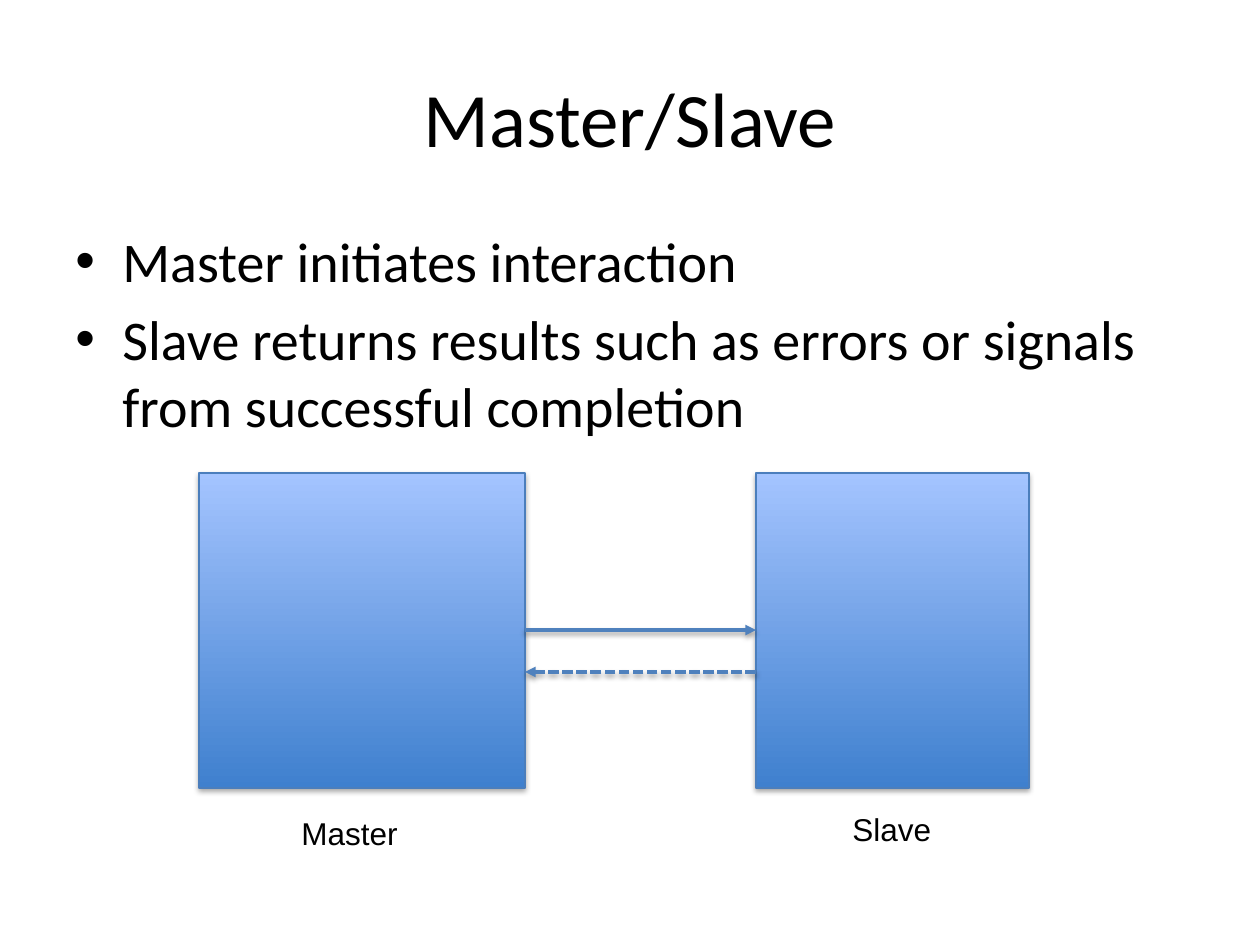
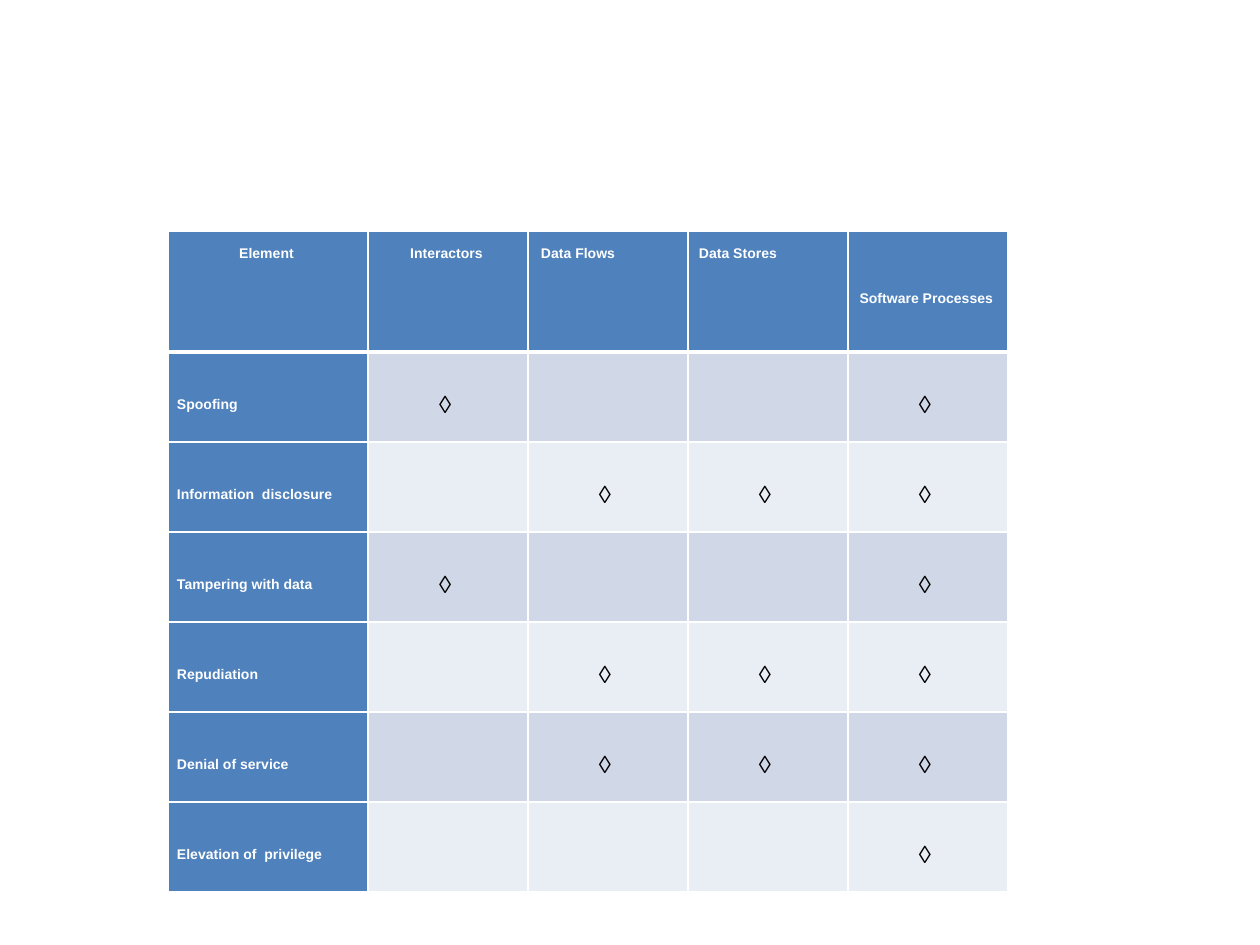
from dataclasses import dataclass

from lxml import etree
from pptx import Presentation
from pptx import util as u
from pptx.dml.color import RGBColor
from pptx.enum import dml, shapes, text
from pptx.oxml import parse_xml
from pptx.oxml.ns import nsdecls, qn


@dataclass(frozen=True)
class Theme:
    black: str = "000000"
    white: str = "FFFFFF"
    blue: str = "4F81BD"
    box_line: str = "4B7EBC"
    box_bottom: str = "3F80CE"
    box_top: str = "A4C4FF"
    bands: tuple = ("D0D8E8", "E9EDF4")
    heading_font: str = "Calibri"
    plain_font: str = "Arial"
    title: float = 44
    body: float = 32
    label: float = 18
    mark: float = 14
    cell: float = 8


theme = Theme()
PX = 914400 / 126


def px(*lengths):
    return [u.Emu(round(n * PX)) for n in lengths]


def style(p, font, size, color, bold=False, align=text.PP_ALIGN.LEFT):
    p.alignment = align
    for r in p.runs:
        r.font.name, r.font.size, r.font.bold = font, u.Pt(size), bold
        r.font.color.rgb = RGBColor.from_string(color)


prs = Presentation()
prs.slide_width, prs.slide_height = px(1260, 945)
blank = prs.slide_layouts[6]

# Slide 1: title
s = prs.slides.add_slide(blank)
tf = s.shapes.add_textbox(*px(63, 38, 1134, 157)).text_frame
tf.word_wrap = True
tf.vertical_anchor = text.MSO_ANCHOR.MIDDLE
tf.text = "Master/Slave"
style(tf.paragraphs[0], theme.heading_font, theme.title, theme.black,
      align=text.PP_ALIGN.CENTER)

# Bullets
tf = s.shapes.add_textbox(*px(63, 220, 1134, 221)).text_frame
tf.word_wrap = True
tf.text = ("Master initiates interaction\n"
           "Slave returns results such as errors or signals from successful completion")
indent = px(47)[0]
for p in tf.paragraphs:
    style(p, theme.heading_font, theme.body, theme.black)
    p.space_before = u.Pt(theme.body * 0.2)
    pPr = p._p.get_or_add_pPr()
    pPr.set("marL", str(indent))
    pPr.set("indent", str(-indent))
    etree.SubElement(pPr, qn("a:buFont")).set("typeface", theme.plain_font)
    etree.SubElement(pPr, qn("a:buChar")).set("char", "•")

# Boxes with their labels
diagram = []
for name, left, width, label_left, label_top in (
        ("Master", 199, 326, 289, 808), ("Slave", 756, 273, 840, 804)):
    sp = s.shapes.add_shape(shapes.MSO_SHAPE.RECTANGLE, *px(left, 473, width, 315))
    sp.fill.gradient()
    sp.fill.gradient_angle = 90
    for stop, color in zip(sp.fill.gradient_stops, (theme.box_bottom, theme.box_top)):
        stop.color.rgb = RGBColor.from_string(color)
    sp.line.color.rgb = RGBColor.from_string(theme.box_line)
    sp.line.width = u.Pt(0.75)
    diagram.append((sp, 35))

    tf = s.shapes.add_textbox(*px(label_left, label_top, 147, 50)).text_frame
    tf.word_wrap = True
    tf.text = name
    style(tf.paragraphs[0], theme.plain_font, theme.label, theme.black)

# Request and reply arrows
for start, end, y, dash in ((525, 756, 630, None),
                            (756, 525, 672, dml.MSO_LINE.SQUARE_DOT)):
    arrow = s.shapes.add_connector(shapes.MSO_CONNECTOR.STRAIGHT, *px(start, y, end, y))
    arrow.line.color.rgb = RGBColor.from_string(theme.blue)
    arrow.line.width = u.Pt(2)
    if dash:
        arrow.line.dash_style = dash
    etree.SubElement(arrow.line._get_or_add_ln(), qn("a:tailEnd")).set("type", "triangle")
    diagram.append((arrow, 38))

# Soft shadow under boxes and arrows
for sp, alpha in diagram:
    sp._element.spPr.append(parse_xml(
        f'<a:effectLst {nsdecls("a")}><a:outerShdw blurRad="{u.Pt(3.1)}" '
        f'dist="{u.Pt(1.7)}" dir="5400000" rotWithShape="0">'
        f'<a:srgbClr val="{theme.black}"><a:alpha val="{alpha * 1000}"/></a:srgbClr>'
        '</a:outerShdw></a:effectLst>'))

# Slide 2: threats against system elements
s = prs.slides.add_slide(blank)
headers = ("Element ", "Interactors ", "Data Flows", "Data Stores", "Software Processes ")
threats = (
    ("Spoofing", (1, 4)),
    ("Information  disclosure", (2, 3, 4)),
    ("Tampering with data", (1, 4)),
    ("Repudiation", (2, 3, 4)),
    ("Denial of service", (2, 3, 4)),
    ("Elevation of  privilege", (4,)),
)
rows = [headers] + [
    [threat] + ["◊ " if col in marked else "" for col in range(1, len(headers))]
    for threat, marked in threats]
header_indents = {2: 4, 3: 2}

table = s.shapes.add_table(len(rows), len(headers), *px(168, 231, 840, 661)).table
for col, width in zip(table.columns, px(200, 160, 160, 160, 160)):
    col.width = width
for row, height in zip(table.rows, px(121, *[90] * len(threats))):
    row.height = height

for i, row in enumerate(rows):
    for j, words in enumerate(row):
        cell = table.cell(i, j)
        is_heading = i == 0 or j == 0
        cell.margin_left, cell.margin_top, cell.margin_right, cell.margin_bottom = px(9, 14, 8, 0)
        top_header = i == 0 and j < len(headers) - 1
        cell.vertical_anchor = text.MSO_ANCHOR.TOP if top_header else text.MSO_ANCHOR.MIDDLE

        # Borders, with a heavier rule under the header row
        tcPr = cell._tc.get_or_add_tcPr()
        for side in "LRTB":
            heavy = (i, side) in ((0, "B"), (1, "T"))
            tcPr.append(parse_xml(
                f'<a:ln{side} {nsdecls("a")} w="{u.Pt(3 if heavy else 1)}"><a:solidFill>'
                f'<a:srgbClr val="{theme.white}"/></a:solidFill></a:ln{side}>'))
        cell.fill.solid()
        cell.fill.fore_color.rgb = RGBColor.from_string(
            theme.blue if is_heading else theme.bands[(i - 1) % 2])

        # Cell text
        cell.text_frame.text = words
        p = cell.text_frame.paragraphs[0]
        p.line_spacing = 1.07
        indented = i == 0 and j in header_indents
        left_aligned = indented or (i > 0 and j == 0)
        style(p, theme.plain_font, theme.cell if is_heading else theme.mark,
              theme.white if is_heading else theme.black, bold=is_heading,
              align=text.PP_ALIGN.LEFT if left_aligned else text.PP_ALIGN.CENTER)
        if indented:
            p._p.get_or_add_pPr().set("marL", str(px(header_indents[j])[0]))

prs.save("out.pptx")
